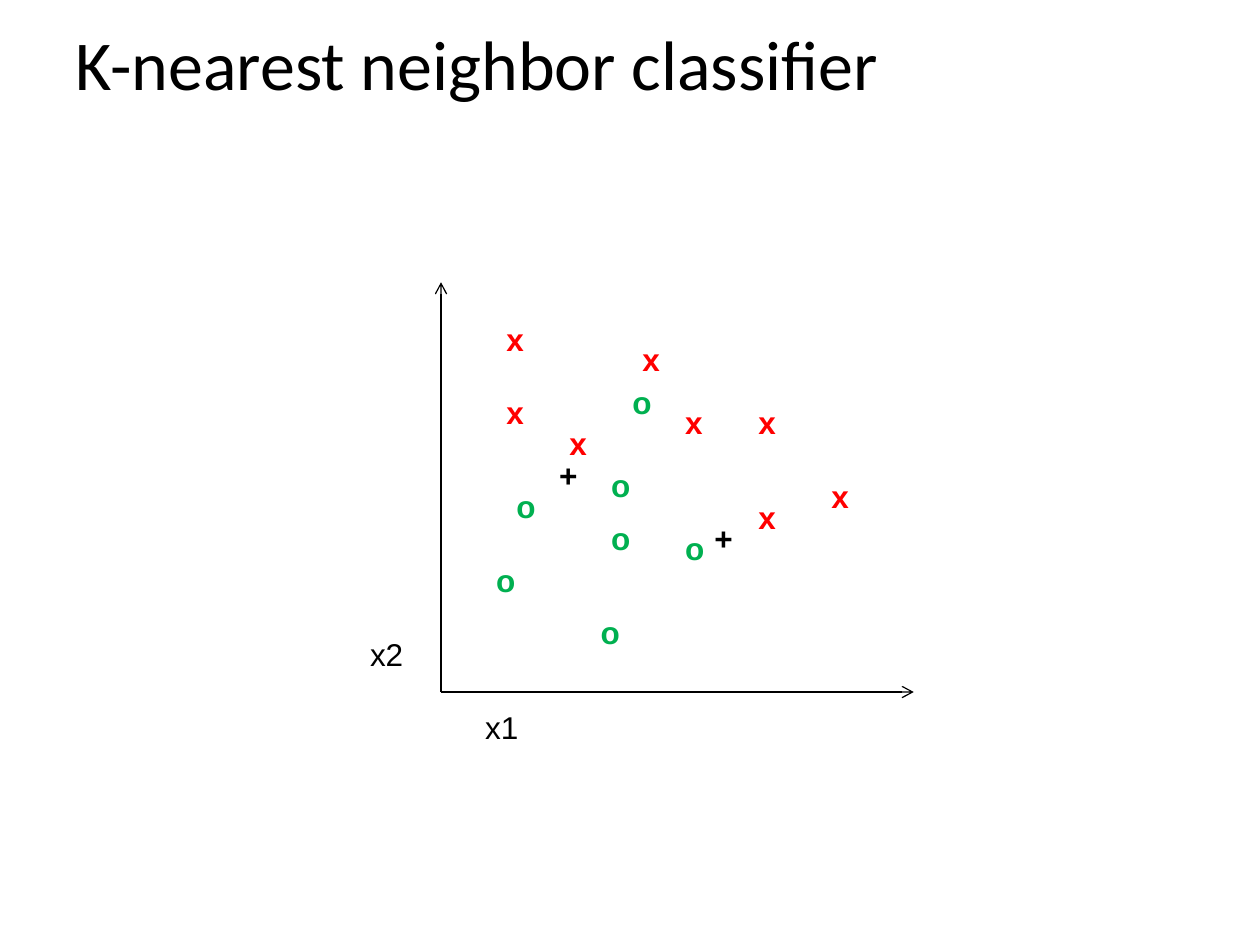
from dataclasses import dataclass

from lxml import etree
from pptx import Presentation
from pptx import util as u
from pptx.dml.color import RGBColor
from pptx.enum import shapes, text
from pptx.oxml import ns


@dataclass(frozen=True)
class Theme:
    black: str = "000000"
    red: str = "FF0000"
    green: str = "00B050"
    title_font: str = "Calibri"
    body_font: str = "Arial"
    title_size: float = 40
    body_size: float = 18
    axis_width: float = 0.75


@dataclass(frozen=True)
class Box:
    left: float
    top: float
    width: float
    height: float


THEME = Theme()
LABEL_HEIGHT = 1.02

POINT_CLASSES = [
    ("x", THEME.red, 0.86, [
        (4.67, 2.31), (6.15, 2.31), (6.15, 4.22), (7.62, 3.81),
        (1.07, 0.64), (1.07, 2.11), (3.81, 1.04), (2.34, 2.74),
    ]),
    ("o", THEME.green, 0.91, [
        (3.61, 1.91), (4.67, 4.85), (0.86, 5.49), (1.27, 4.01),
        (2.97, 6.55), (3.18, 4.65), (3.18, 3.58),
    ]),
    ("+", THEME.black, 0.89, [(2.13, 3.38), (5.26, 4.65)]),
]
AXIS_LABELS = [("x2", -1.68, 6.99), ("x1", 0.64, 8.46)]


def add_text(slide, box, content, *, font=THEME.body_font, size=THEME.body_size,
             color=THEME.black, bold=False, wrap=False,
             anchor=text.MSO_ANCHOR.TOP):
    shape = slide.shapes.add_textbox(
        u.Cm(box.left), u.Cm(box.top), u.Cm(box.width), u.Cm(box.height))
    frame = shape.text_frame
    frame.word_wrap = wrap
    frame.vertical_anchor = anchor
    paragraph = frame.paragraphs[0]
    run = paragraph.add_run()
    run.text = content
    run.font.name = font
    run.font.size = u.Pt(size)
    run.font.bold = bold
    run.font.color.rgb = RGBColor.from_string(color)


def add_arrow(slide, start, end):
    connector = slide.shapes.add_connector(
        shapes.MSO_CONNECTOR.STRAIGHT, *map(u.Cm, (*start, *end)))
    connector.line.width = u.Pt(THEME.axis_width)
    connector.line.color.rgb = RGBColor.from_string(THEME.black)
    line = connector.line._get_or_add_ln()
    etree.SubElement(line, ns.qn("a:tailEnd"), type="arrow")
    etree.SubElement(connector._element.spPr, ns.qn("a:effectLst"))


def add_title(slide, box):
    add_text(slide, box, "K-nearest neighbor classifier",
             font=THEME.title_font, size=THEME.title_size, wrap=True,
             anchor=text.MSO_ANCHOR.MIDDLE)


def add_scatter(slide, box):
    bottom = box.top + box.height
    origin = (box.left, bottom)
    add_arrow(slide, origin, (box.left, box.top))
    add_arrow(slide, origin, (box.left + box.width, bottom))
    for label, x, y in AXIS_LABELS:
        add_text(slide, Box(box.left + x, box.top + y, 1.19, LABEL_HEIGHT), label)
    for symbol, color, width, points in POINT_CLASSES:
        for x, y in points:
            add_text(slide, Box(box.left + x, box.top + y, width, LABEL_HEIGHT),
                     symbol, color=color, bold=True)


def main():
    presentation = Presentation()
    presentation.slide_width = u.Cm(25.4)
    presentation.slide_height = u.Cm(19.05)
    slide = presentation.slides.add_slide(presentation.slide_layouts[6])
    add_title(slide, Box(1.27, 0, 22.86, 2.54))
    add_scatter(slide, Box(8.89, 5.69, 9.53, 8.26))
    presentation.save("out.pptx")


if __name__ == "__main__":
    main()
